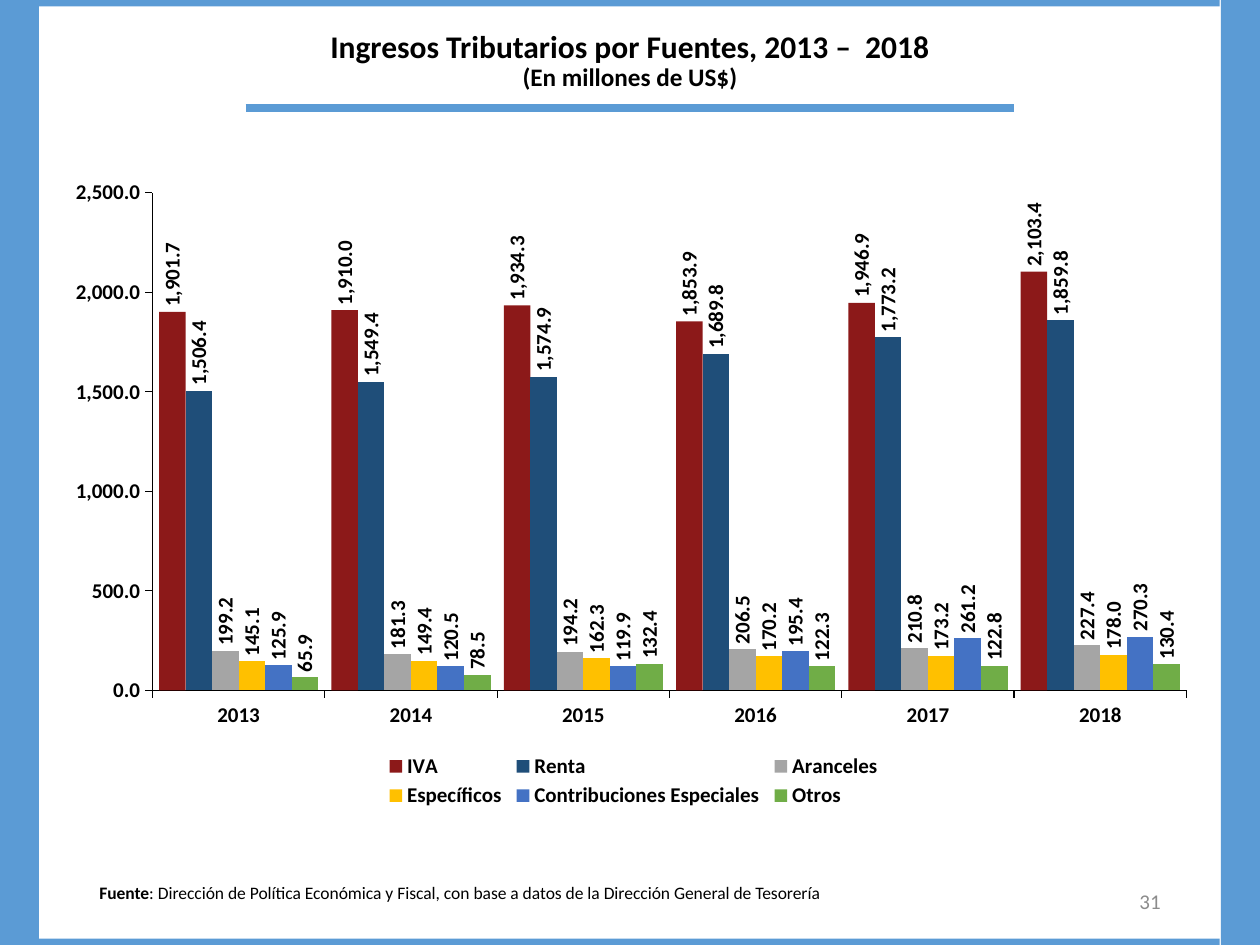
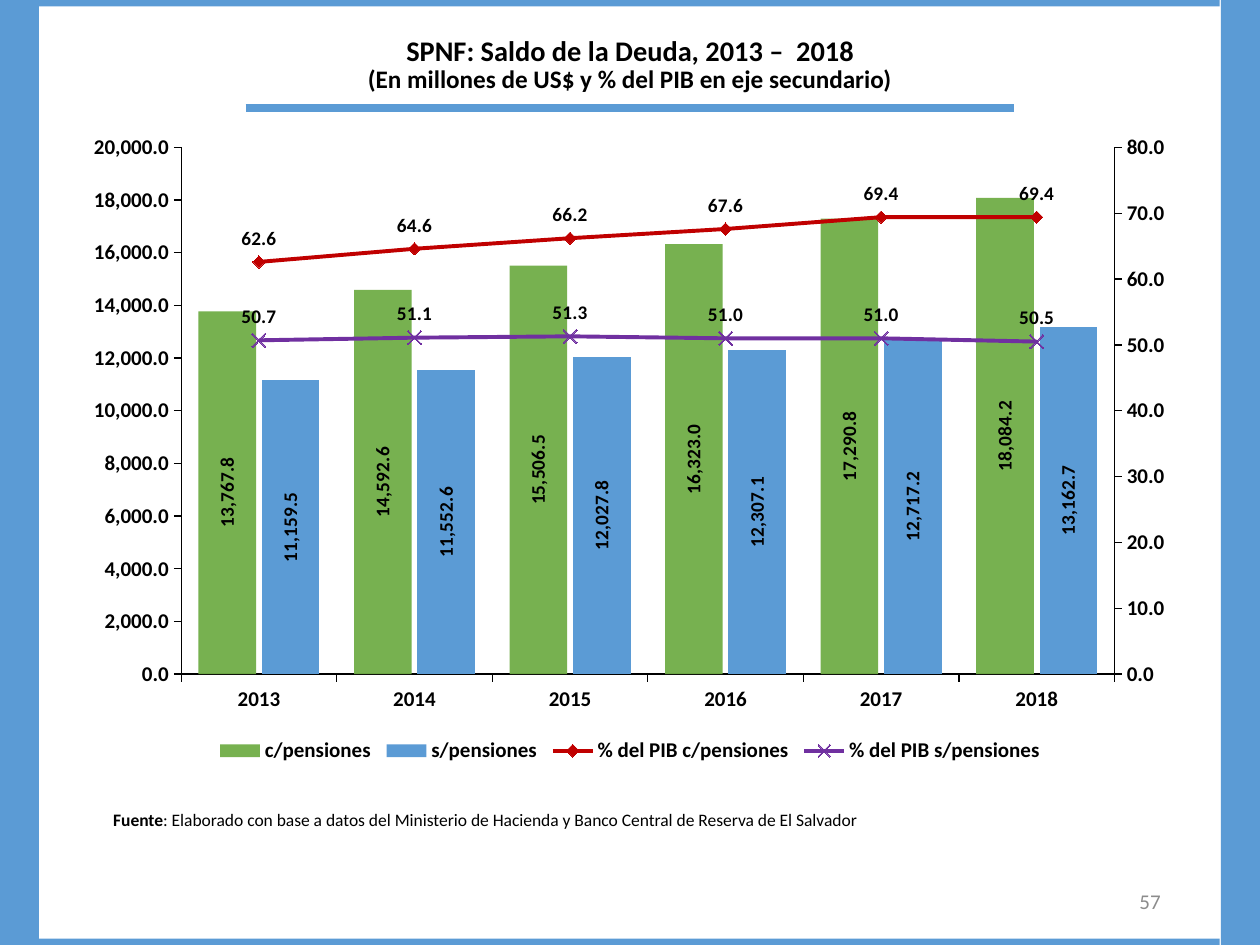
from copy import deepcopy

from lxml import etree
from pptx import Presentation
from pptx.chart.data import CategoryChartData
from pptx.dml.color import RGBColor
from pptx.enum.chart import (XL_CHART_TYPE, XL_LABEL_POSITION, XL_LEGEND_POSITION,
                             XL_MARKER_STYLE, XL_TICK_MARK)
from pptx.enum.shapes import MSO_CONNECTOR, MSO_SHAPE
from pptx.enum.text import MSO_ANCHOR, PP_ALIGN
from pptx.oxml import parse_xml
from pptx.oxml.ns import qn
from pptx.util import Inches, Pt

CLUSTERED = XL_CHART_TYPE.COLUMN_CLUSTERED
OUTSIDE, CENTER, ABOVE = (XL_LABEL_POSITION.OUTSIDE_END, XL_LABEL_POSITION.CENTER,
                          XL_LABEL_POSITION.ABOVE)
DIAMOND, CROSS = XL_MARKER_STYLE.DIAMOND, XL_MARKER_STYLE.X
MIDDLE, TOP = MSO_ANCHOR.MIDDLE, MSO_ANCHOR.TOP

FONT = "Calibri"
FORMAT = "#,##0.0"
BLACK = RGBColor(0x00, 0x00, 0x00)
GRAY = RGBColor(0x8C, 0x8C, 0x8C)
BLUE = RGBColor(0x5B, 0x9B, 0xD5)
MAROON = RGBColor(0x80, 0x00, 0x00)
NAVY = RGBColor(0x1F, 0x4E, 0x79)
SILVER = RGBColor(0xA5, 0xA5, 0xA5)
GOLD = RGBColor(0xFF, 0xC0, 0x00)
INDIGO = RGBColor(0x44, 0x72, 0xC4)
GREEN = RGBColor(0x70, 0xAD, 0x47)
RED = RGBColor(0xC0, 0x00, 0x00)
PURPLE = RGBColor(0x70, 0x30, 0xA0)

YEARS = ["2013", "2014", "2015", "2016", "2017", "2018"]
BANDS = [(0, 0, 0.31, 7.5), (9.69, 0, 0.31, 7.5),
         (0.31, 0, 9.37, 0.05), (0.31, 7.45, 9.37, 0.05)]

# Series: name, values, colour, opacity in %, marker (style, size) for lines
# Plot and legend boxes are inches within the chart frame
SLIDES = [
    {"title": ["Ingresos Tributarios por Fuentes, 2013 –  2018", "(En millones de US$)"],
     "title_box": (0.69, 0.24, 8.62, 0.5), "title_size": 18, "number": "31",
     "source": "Dirección de Política Económica y Fiscal, con base a datos de la "
               "Dirección General de Tesorería",
     "source_box": (0.69, 6.95, 8.2, 0.27),
     "chart_box": (0.43, 1.33, 9.18, 5.15), "plot": (0.78, 0.2, 8.21, 3.95),
     "legend": (2.6, 4.62, 4.0, 0.5), "gap": 50, "overlap": 0,
     "top": 2500, "step": 500, "label_size": 12, "label_pos": OUTSIDE,
     "series": [
         ("IVA", [1901.7, 1910.0, 1934.3, 1853.9, 1946.9, 2103.4], MAROON, 90, None),
         ("Renta", [1506.4, 1549.4, 1574.9, 1689.8, 1773.2, 1859.8], NAVY, 100, None),
         ("Aranceles", [199.2, 181.3, 194.2, 206.5, 210.8, 227.4], SILVER, 100, None),
         ("Específicos", [145.1, 149.4, 162.3, 170.2, 173.2, 178.0], GOLD, 100, None),
         ("Contribuciones Especiales", [125.9, 120.5, 119.9, 195.4, 261.2, 270.3],
          INDIGO, 100, None),
         ("Otros", [65.9, 78.5, 132.4, 122.3, 122.8, 130.4], GREEN, 100, None)]},
    {"title": ["SPNF: Saldo de la Deuda, 2013 –  2018",
               "(En millones de US$ y % del PIB en eje secundario)"],
     "title_box": (0.69, 0.25, 8.62, 0.54), "title_size": 16.2, "number": "57",
     "source": "Elaborado con base a datos del Ministerio de Hacienda y Banco Central "
               "de Reserva de El Salvador",
     "source_box": (0.8, 6.37, 7.78, 0.27),
     "chart_box": (0.58, 0.97, 8.85, 5.13), "plot": (0.86, 0.2, 7.41, 4.18),
     "legend": (1.1, 4.85, 6.65, 0.28), "gap": 60, "overlap": -10,
     "top": 20000, "step": 2000, "label_size": 11, "label_pos": CENTER,
     "series": [
         ("c/pensiones", [13767.8, 14592.6, 15506.5, 16323.0, 17290.8, 18084.2],
          GREEN, 95, None),
         ("s/pensiones", [11159.5, 11552.6, 12027.8, 12307.1, 12717.2, 13162.7],
          BLUE, 100, None),
         ("% del PIB c/pensiones", [62.6, 64.6, 66.2, 67.6, 69.4, 69.4],
          RED, 100, (DIAMOND, 7)),
         ("% del PIB s/pensiones", [50.7, 51.1, 51.3, 51.0, 51.0, 50.5],
          PURPLE, 100, (CROSS, 8))]},
]

CHART_NS = 'xmlns:c="http://schemas.openxmlformats.org/drawingml/2006/chart"'


def add_text(s, box, paragraphs, align, anchor, color=BLACK):
    """Add a text box; each paragraph is a list of (text, size, bold) runs."""
    tf = s.shapes.add_textbox(*map(Inches, box)).text_frame
    tf.word_wrap = True
    tf.vertical_anchor = anchor
    for i, runs in enumerate(paragraphs):
        p = tf.add_paragraph() if i else tf.paragraphs[0]
        p.alignment = align
        for text, size, bold in runs:
            r = p.add_run()
            r.text = text
            r.font.name, r.font.size, r.font.bold = FONT, Pt(size), bold
            r.font.color.rgb = color
    return tf


def make_layout(box, frame, target):
    """Manual layout of a chart part, from inches to fractions of the frame."""
    x, y, w, h = (v / frame[2 + i % 2] for i, v in enumerate(box))
    inner = f'<c:layoutTarget val="{target}"/>' if target else ""
    return parse_xml(
        f'<c:layout {CHART_NS}><c:manualLayout>{inner}<c:xMode val="edge"/>'
        f'<c:yMode val="edge"/><c:x val="{x:.3f}"/><c:y val="{y:.3f}"/>'
        f'<c:w val="{w:.3f}"/><c:h val="{h:.3f}"/></c:manualLayout></c:layout>')


prs = Presentation()
prs.slide_width, prs.slide_height = Inches(10), Inches(7.5)

for d in SLIDES:
    s = prs.slides.add_slide(prs.slide_layouts[6])

    # Frame bands and rule under the title
    for band in BANDS:
        sp = s.shapes.add_shape(MSO_SHAPE.RECTANGLE, *map(Inches, band))
        sp.shadow.inherit = False
        sp.fill.solid()
        sp.fill.fore_color.rgb = BLUE
        sp.line.fill.background()
    rule = s.shapes.add_connector(MSO_CONNECTOR.STRAIGHT, Inches(1.95), Inches(0.86),
                                  Inches(8.05), Inches(0.86))
    rule.line.color.rgb, rule.line.width = BLUE, Pt(4.5)
    etree.SubElement(rule._element.spPr, qn("a:effectLst"))

    # Title, page number and source
    sizes = (d["title_size"], 14.4)
    tf = add_text(s, d["title_box"], [[(t, z, True)] for t, z in zip(d["title"], sizes)],
                  PP_ALIGN.CENTER, MIDDLE)
    for p in tf.paragraphs:
        p.line_spacing = 0.9
    add_text(s, (7.06, 6.95, 2.25, 0.4), [[(d["number"], 12, False)]],
             PP_ALIGN.RIGHT, MIDDLE, GRAY)
    add_text(s, d["source_box"], [[("Fuente", 10, True), (": " + d["source"], 10, False)]],
             PP_ALIGN.JUSTIFY, TOP)

    # Chart with all series as columns
    data = CategoryChartData(number_format=FORMAT)
    data.categories = YEARS
    for name, values, *_ in d["series"]:
        data.add_series(name, values)
    chart = s.shapes.add_chart(CLUSTERED, *map(Inches, d["chart_box"]), data).chart
    chart.has_title = False
    chart.font.name, chart.font.size, chart.font.color.rgb = FONT, Pt(10), BLACK
    bars = chart.plots[0]
    bars.vary_by_categories = False
    bars.gap_width, bars.overlap = d["gap"], d["overlap"]

    # Axes
    for axis in (chart.category_axis, chart.value_axis):
        axis.has_major_gridlines = False
        axis.major_tick_mark, axis.minor_tick_mark = XL_TICK_MARK.OUTSIDE, XL_TICK_MARK.NONE
        axis.format.line.color.rgb, axis.format.line.width = BLACK, Pt(0.75)
        font = axis.tick_labels.font
        font.name, font.size, font.bold, font.color.rgb = FONT, Pt(12), True, BLACK
    axis = chart.value_axis
    axis.minimum_scale, axis.maximum_scale, axis.major_unit = 0, d["top"], d["step"]
    axis.tick_labels.number_format = FORMAT
    axis.tick_labels.number_format_is_linked = False

    # Legend and plot area
    chart.has_legend = True
    legend = chart.legend
    legend.position, legend.include_in_layout = XL_LEGEND_POSITION.BOTTOM, False
    font = legend.font
    font.name, font.size, font.bold, font.color.rgb = FONT, Pt(12), True, BLACK
    plot_area = chart._chartSpace.chart.plotArea
    for part, box, target in ((plot_area, d["plot"], "inner"),
                              (legend._element, d["legend"], "")):
        for old in part.findall(qn("c:layout")):
            part.remove(old)
        layout = make_layout(box, d["chart_box"], target)
        if target:
            part.insert(0, layout)
        else:
            part.find(qn("c:legendPos")).addnext(layout)

    # Percentage series become lines on a secondary axis
    line_sers = [ser._element for ser, row in zip(bars.series, d["series"]) if row[4]]
    if line_sers:
        line_chart = parse_xml(
            f'<c:lineChart {CHART_NS}><c:grouping val="standard"/><c:varyColors val="0"/>'
            '<c:marker val="1"/><c:axId val="5001"/><c:axId val="5002"/></c:lineChart>')
        bars._element.addnext(line_chart)
        for ser in line_sers:
            for flag in ser.findall(qn("c:invertIfNegative")):
                ser.remove(flag)
            line_chart.find(qn("c:marker")).addprevious(ser)
        year_axis, amount_axis = chart.category_axis._element, chart.value_axis._element
        value_ax, year_ax = deepcopy(amount_axis), deepcopy(year_axis)
        amount_axis.addnext(value_ax)
        value_ax.addnext(year_ax)
        for ax, own, other in ((year_ax, "5001", "5002"), (value_ax, "5002", "5001")):
            ax.find(qn("c:axId")).set("val", own)
            ax.find(qn("c:crossAx")).set("val", other)
        year_ax.find(qn("c:delete")).set("val", "1")
        value_ax.find(qn("c:axPos")).set("val", "r")
        value_ax.find(qn("c:crosses")).set("val", "max")
        value_ax.find(qn("c:majorUnit")).set("val", "10")
        value_ax.find(qn("c:scaling")).find(qn("c:max")).set("val", "80")

    # Series colours, markers and labels
    all_series = [ser for plot in chart.plots for ser in plot.series]
    for ser, (_, _, color, opacity, marker) in zip(all_series, d["series"]):
        if marker:
            ser.smooth = False
            ser.format.line.color.rgb, ser.format.line.width = color, Pt(2.25)
            ser.marker.style, ser.marker.size = marker
            ser.marker.format.line.color.rgb = color
            if marker[0] == DIAMOND:
                ser.marker.format.fill.solid()
                ser.marker.format.fill.fore_color.rgb = color
            else:
                ser.marker.format.fill.background()
        else:
            ser.format.fill.solid()
            ser.format.fill.fore_color.rgb = color
            if opacity < 100:
                rgb = next(ser._element.spPr.iter(qn("a:srgbClr")))
                etree.SubElement(rgb, qn("a:alpha")).set("val", str(opacity * 1000))
        labels = ser.data_labels
        labels.show_value = True
        labels.number_format, labels.number_format_is_linked = FORMAT, False
        labels.position = ABOVE if marker else d["label_pos"]
        font = labels.font
        font.name, font.size, font.bold = FONT, Pt(d["label_size"]), True
        font.color.rgb = BLACK
        if not marker:
            body = next(labels._element.iter(qn("a:bodyPr")))
            body.set("rot", "-5400000")
            body.set("vert", "horz")

prs.save("out.pptx")
